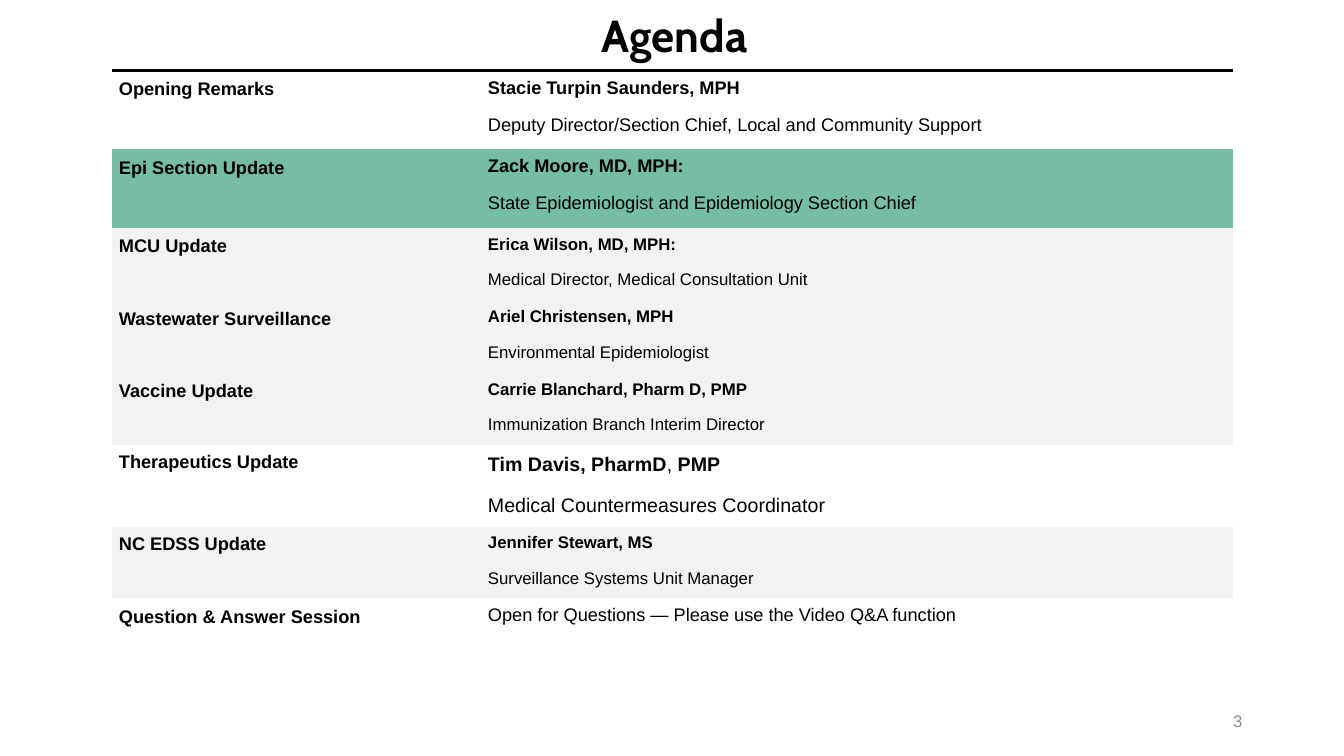
from lxml import etree
from pptx import Presentation
from pptx.dml.color import RGBColor
from pptx.enum.text import MSO_ANCHOR, PP_ALIGN
from pptx.oxml.ns import qn
from pptx.util import Inches, Pt

COLORS = {"ink": "000000", "number": "8C8C8C", "current": "75BDA7", "band": "F2F2F2"}
LOOSE = 1.07
COLUMN_WIDTHS = (3.66, 7.46)
CELL_INSET = 0.07

# topic, topic line spacing, speaker lines as (text, bold) runs, size, line spacing, fill, height
AGENDA = [
    ("Opening Remarks", LOOSE,
     [[("Stacie Turpin Saunders, MPH", True)],
      [("Deputy Director/Section Chief, Local and Community Support", False)]],
     13, None, None, 0.78),
    ("Epi Section Update", LOOSE,
     [[("Zack Moore, MD, MPH:", True)],
      [("State Epidemiologist and Epidemiology Section Chief", False)]],
     13, None, "current", 0.78),
    ("MCU Update", LOOSE,
     [[("Erica Wilson, MD, MPH:", True)],
      [("Medical Director, Medical Consultation Unit", False)]],
     12, None, "band", 0.72),
    ("Wastewater Surveillance", LOOSE,
     [[("Ariel Christensen, MPH", True)],
      [("Environmental Epidemiologist", False)]],
     12, None, "band", 0.72),
    ("Vaccine Update", LOOSE,
     [[("Carrie Blanchard, Pharm D, PMP", True)],
      [("Immunization Branch Interim Director", False)]],
     12, None, "band", 0.72),
    ("Therapeutics Update", None,
     [[("Tim Davis, PharmD", True), (", ", False), ("PMP", True)],
      [("Medical Countermeasures Coordinator", False)]],
     14, LOOSE, None, 0.8),
    ("NC EDSS Update", None,
     [[("Jennifer Stewart, MS", True)],
      [("Surveillance Systems Unit Manager", False)]],
     12, None, "band", 0.71),
    ("Question & Answer Session", LOOSE,
     [[("Open for Questions — Please use the Video Q&A function", False)]],
     13, None, None, 0.4),
]


def add_run(paragraph, text, size, bold=False, color="ink", font="Arial"):
    run = paragraph.add_run()
    run.text = text
    run.font.name = font
    run.font.size = Pt(size)
    run.font.bold = bold
    run.font.color.rgb = RGBColor.from_string(COLORS[color])


def add_label(slide, box, text, size, align, **style):
    label = slide.shapes.add_textbox(*(Inches(length) for length in box))
    frame = label.text_frame
    frame.word_wrap = True
    frame.vertical_anchor = MSO_ANCHOR.MIDDLE
    frame.paragraphs[0].alignment = align
    add_run(frame.paragraphs[0], text, size, **style)


def set_borders(cell, top_rule):
    """Clear all four borders, except for the heavy rule above the first row."""
    properties = cell._tc.get_or_add_tcPr()
    for position, side in enumerate(("lnL", "lnR", "lnT", "lnB")):
        line = etree.Element(qn(f"a:{side}"))
        if side == "lnT" and top_rule:
            line.set("w", str(Pt(2.25)))
            fill = etree.SubElement(line, qn("a:solidFill"))
            etree.SubElement(fill, qn("a:srgbClr"), val=COLORS["ink"])
        else:
            etree.SubElement(line, qn("a:noFill"))
        properties.insert(position, line)


def fill_cell(cell, lines, size, line_spacing, fill, top_rule):
    cell.margin_left = cell.margin_right = Inches(CELL_INSET)
    cell.margin_top = cell.margin_bottom = Inches(CELL_INSET)
    if fill:
        cell.fill.solid()
        cell.fill.fore_color.rgb = RGBColor.from_string(COLORS[fill])
    else:
        cell.fill.background()
    set_borders(cell, top_rule)
    frame = cell.text_frame
    for index, runs in enumerate(lines):
        paragraph = frame.add_paragraph() if index else frame.paragraphs[0]
        paragraph.space_before = Pt(6 if index else 0)
        paragraph.space_after = Pt(6)
        if line_spacing:
            paragraph.line_spacing = line_spacing
        for text, bold in runs:
            add_run(paragraph, text, size, bold)


def add_agenda(slide, left, top):
    height = sum(item[-1] for item in AGENDA)
    table = slide.shapes.add_table(
        len(AGENDA), len(COLUMN_WIDTHS), Inches(left), Inches(top),
        Inches(sum(COLUMN_WIDTHS)), Inches(height)).table
    table.first_row = table.horz_banding = False
    for column, width in zip(table.columns, COLUMN_WIDTHS):
        column.width = Inches(width)
    for index, item in enumerate(AGENDA):
        topic, topic_spacing, speaker, size, speaker_spacing, fill, row_height = item
        table.rows[index].height = Inches(row_height)
        top_rule = index == 0
        fill_cell(table.cell(index, 0), [[(topic, True)]], 13, topic_spacing, fill, top_rule)
        fill_cell(table.cell(index, 1), speaker, size, speaker_spacing, fill, top_rule)


def main():
    deck = Presentation()
    deck.slide_width, deck.slide_height = Inches(13.33), Inches(7.5)
    slide = deck.slides.add_slide(deck.slide_layouts[6])
    add_label(slide, (9.42, 6.95, 3, 0.4), "3", 12, PP_ALIGN.RIGHT, color="number")
    add_agenda(slide, 1.11, 0.7)
    add_label(slide, (5.87, 0.02, 1.72, 0.64), "Agenda", 32, PP_ALIGN.LEFT,
              bold=True, font="Cabin")
    deck.save("out.pptx")


if __name__ == "__main__":
    main()
